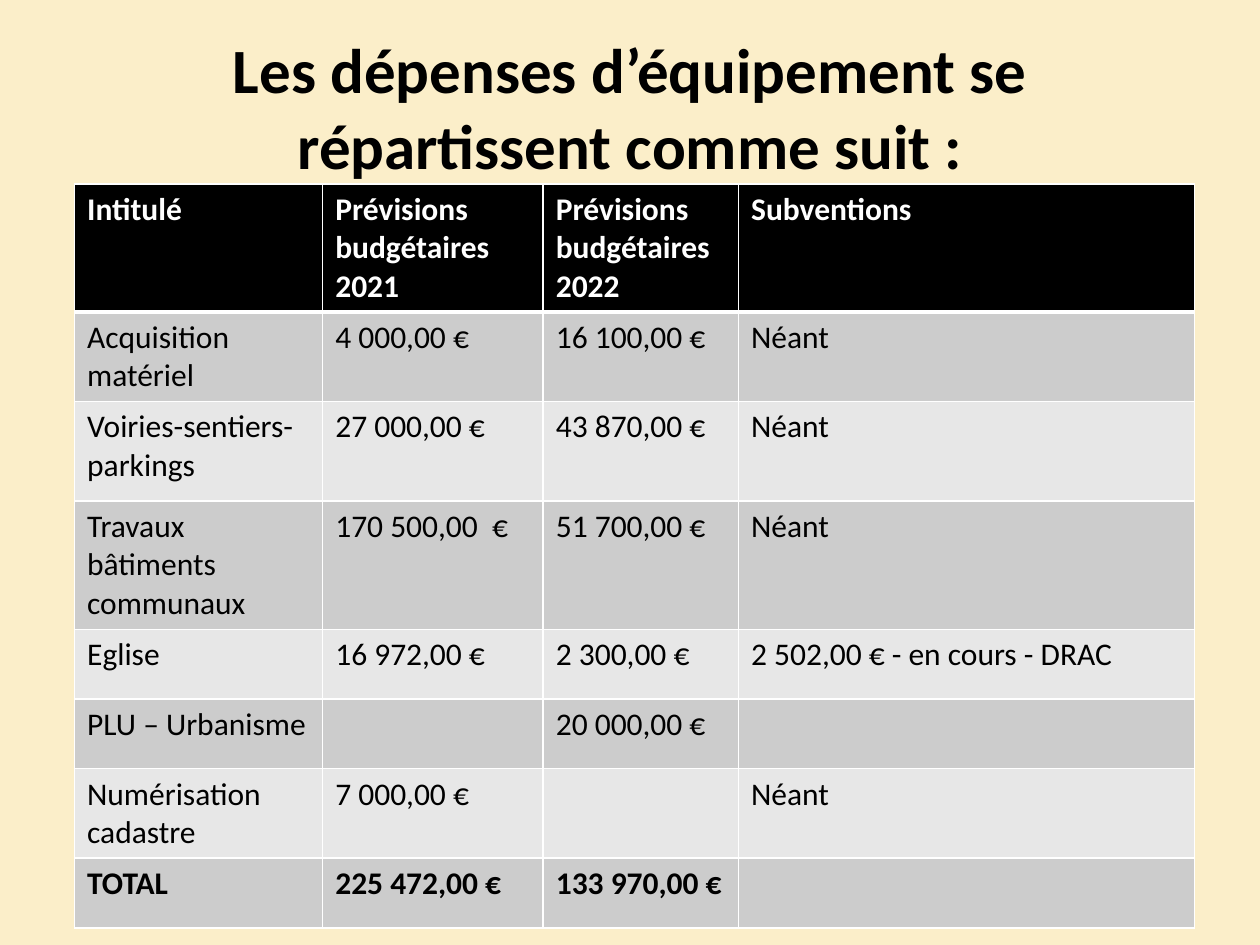
from dataclasses import dataclass

from lxml.etree import SubElement
from pptx import Presentation
from pptx.dml.color import RGBColor
from pptx.enum.text import MSO_ANCHOR, MSO_AUTO_SIZE, PP_ALIGN
from pptx.oxml.ns import qn
from pptx.util import Pt

CREAM = RGBColor(0xFB, 0xEE, 0xC9)
BLACK = RGBColor(0, 0, 0)
WHITE = RGBColor(0xFF, 0xFF, 0xFF)
DARK_BAND = RGBColor(0xCC, 0xCC, 0xCC)
LIGHT_BAND = RGBColor(0xE7, 0xE7, 0xE7)
FONT = "Calibri"
COLUMN_WIDTHS = (141.84, 126, 111.6, 260.64)
THIN, THICK = 1, 3


@dataclass(frozen=True)
class BudgetRow:
    height: float
    label: str
    budget_2021: str = ""
    budget_2022: str = ""
    subsidy: str = ""
    bold: bool = False

    def texts(self) -> tuple[str, ...]:
        return self.label, self.budget_2021, self.budget_2022, self.subsidy


BUDGET_ROWS = (
    BudgetRow(72, "Intitulé", "Prévisions budgétaires  2021",
              "Prévisions budgétaires 2022", "Subventions", bold=True),
    BudgetRow(50.4, "Acquisition matériel", "4 000,00 €", "16 100,00 €", "Néant"),
    BudgetRow(56.8, "Voiries-sentiers-parkings", "27 000,00 €", "43 870,00 €", "Néant"),
    BudgetRow(73.4, "Travaux bâtiments communaux", "170 500,00  €", "51 700,00 €", "Néant"),
    BudgetRow(39.8, "Eglise", "16 972,00 €", "2 300,00 €", "2 502,00 € - en cours - DRAC"),
    BudgetRow(39.8, "PLU – Urbanisme", budget_2022="20 000,00 €"),
    BudgetRow(50.4, "Numérisation cadastre", "7 000,00 €", subsidy="Néant"),
    BudgetRow(39.8, "TOTAL", "225 472,00 €", "133 970,00 €", bold=True),
)


def write_text(frame, text: str, *, size: float, color: RGBColor = BLACK,
               bold: bool = False, align: PP_ALIGN = PP_ALIGN.LEFT) -> None:
    paragraph = frame.paragraphs[0]
    paragraph.alignment = align
    if not text:
        return
    run = paragraph.add_run()
    run.text = text
    run.font.name = FONT
    run.font.size = Pt(size)
    run.font.bold = bold
    run.font.color.rgb = color


def set_borders(cell, top: float, bottom: float) -> None:
    """Draw white borders; the sides are always thin. Call before filling."""
    properties = cell._tc.get_or_add_tcPr()
    for side, width in (("L", THIN), ("R", THIN), ("T", top), ("B", bottom)):
        border = SubElement(properties, qn(f"a:ln{side}"), w=str(Pt(width)))
        fill = SubElement(border, qn("a:solidFill"))
        SubElement(fill, qn("a:srgbClr"), val=str(WHITE))


def add_title(slide, text: str) -> None:
    title = slide.shapes.title
    title.left, title.top, title.width, title.height = Pt(36), Pt(21.6), Pt(648), Pt(78.5)
    frame = title.text_frame
    frame.auto_size = MSO_AUTO_SIZE.NONE
    frame.vertical_anchor = MSO_ANCHOR.MIDDLE
    write_text(frame, text, size=36, bold=True, align=PP_ALIGN.CENTER)


def add_budget_table(slide, rows: tuple[BudgetRow, ...]) -> None:
    table = slide.shapes.add_table(
        len(rows), len(COLUMN_WIDTHS), Pt(42.6), Pt(105.2),
        Pt(sum(COLUMN_WIDTHS)), Pt(sum(row.height for row in rows))).table
    for column, width in zip(table.columns, COLUMN_WIDTHS):
        column.width = Pt(width)
    for index, row in enumerate(rows):
        table.rows[index].height = Pt(row.height)
        is_header = index == 0
        band = BLACK if is_header else DARK_BAND if index % 2 else LIGHT_BAND
        for column_index, text in enumerate(row.texts()):
            cell = table.cell(index, column_index)
            set_borders(cell, top=THICK if index == 1 else THIN,
                        bottom=THICK if is_header else THIN)
            cell.fill.solid()
            cell.fill.fore_color.rgb = band
            write_text(cell.text_frame, text, size=18, bold=row.bold,
                       color=WHITE if is_header else BLACK)


def main() -> None:
    presentation = Presentation()
    presentation.slide_width, presentation.slide_height = Pt(720), Pt(540)
    slide = presentation.slides.add_slide(presentation.slide_layouts[5])
    slide.background.fill.solid()
    slide.background.fill.fore_color.rgb = CREAM
    add_title(slide, "Les dépenses d’équipement se répartissent comme suit :")
    add_budget_table(slide, BUDGET_ROWS)
    presentation.save("out.pptx")


if __name__ == "__main__":
    main()
